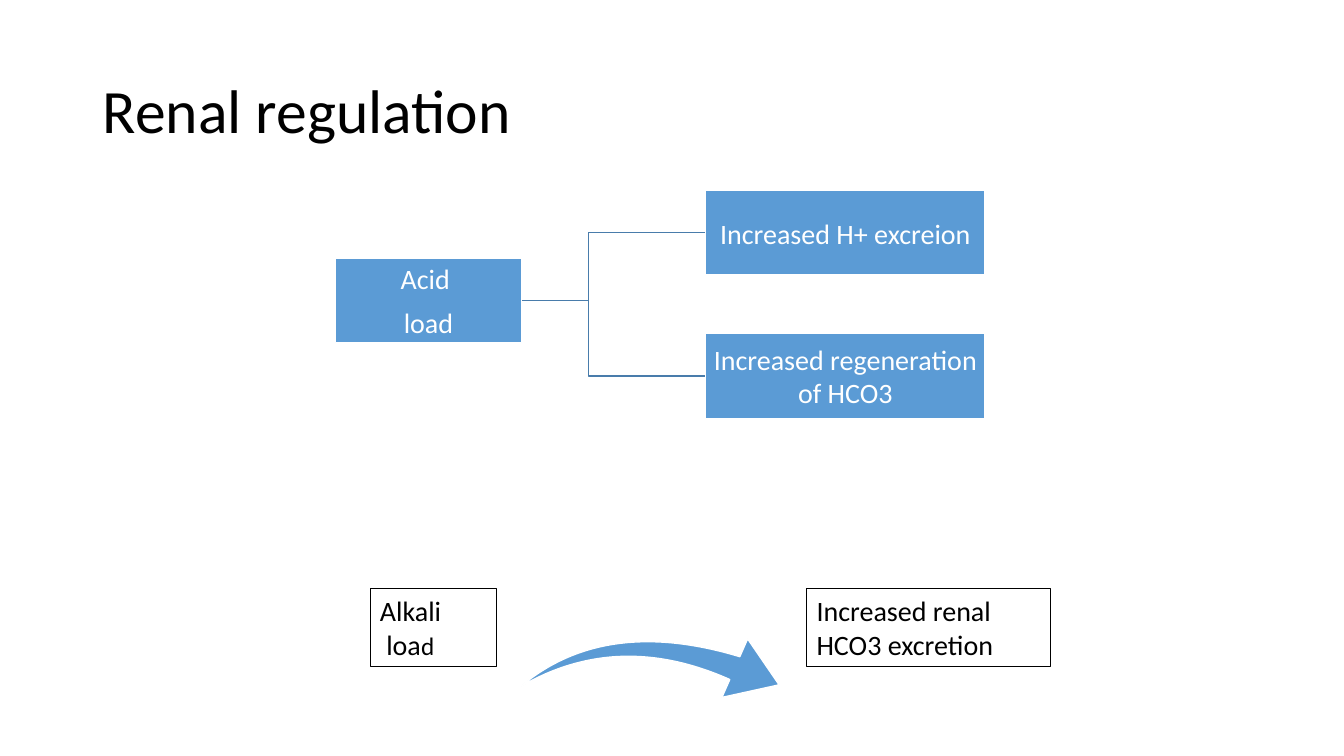
from dataclasses import dataclass
from pptx import Presentation
from pptx.dml.color import RGBColor
from pptx.enum.shapes import MSO_SHAPE
from pptx.enum.text import MSO_ANCHOR, MSO_AUTO_SIZE, PP_ALIGN
from pptx.util import Pt

PX = 9144


@dataclass(frozen=True)
class Theme:
    font: str = "Calibri"
    blue: str = "5B9BD5"
    link: str = "497CAB"
    white: str = "FFFFFF"
    black: str = "000000"
    title: int = 44
    body: int = 20
    small: int = 18
    gap: int = 7


THEME = Theme()


def rgb(code):
    return RGBColor.from_string(code)


def add_run(para, text, size, color):
    run = para.add_run()
    run.text = text
    run.font.name = THEME.font
    run.font.size = Pt(size)
    run.font.color.rgb = rgb(color)


def paint(shape, fill, line, width):
    shape.shadow.inherit = False
    if fill:
        shape.fill.solid()
        shape.fill.fore_color.rgb = rgb(fill)
    else:
        shape.fill.background()
    shape.line.color.rgb = rgb(line)
    shape.line.width = Pt(width)


def add_form(slide, kind, box, fill, line, width):
    shape = slide.shapes.add_shape(kind, *(n * PX for n in box))
    paint(shape, fill, line, width)
    return shape


def write(shape, paras, color, align, gap=0):
    frame = shape.text_frame
    frame.word_wrap = True
    for i, runs in enumerate(paras):
        para = frame.add_paragraph() if i else frame.paragraphs[0]
        para.alignment = align
        para.space_after = Pt(gap)
        for text, size in runs:
            add_run(para, text, size, color)


def add_title(slide, box, text):
    title = slide.shapes.title
    title.left, title.top, title.width, title.height = (n * PX for n in box)
    frame = title.text_frame
    frame.auto_size = MSO_AUTO_SIZE.NONE
    frame.vertical_anchor = MSO_ANCHOR.MIDDLE
    para = frame.paragraphs[0]
    para.alignment = PP_ALIGN.LEFT
    para.line_spacing = 0.9
    add_run(para, text, THEME.title, THEME.black)


def add_node(slide, box, lines):
    node = add_form(slide, MSO_SHAPE.RECTANGLE, box, THEME.blue, THEME.white, 1)
    frame = node.text_frame
    frame.margin_left = frame.margin_right = PX
    frame.margin_top = frame.margin_bottom = PX
    frame.vertical_anchor = MSO_ANCHOR.MIDDLE
    paras = [[(line, THEME.body)] for line in lines]
    write(node, paras, THEME.white, PP_ALIGN.CENTER, THEME.gap)


def add_branch(slide, start, end):
    (x, y), (right, level) = start, end
    mid = (x + right) // 2
    pen = slide.shapes.build_freeform(x, y, scale=PX)
    pen.add_line_segments([(mid, y), (mid, level), end], close=False)
    paint(pen.convert_to_shape(), None, THEME.link, 1)


def add_tree(slide, box, root, leaves):
    left, top, width, height = box
    tall, wide, leaf = 84, 184, 277
    edge = left + width - leaf
    step = (height - tall) // (len(leaves) - 1)
    mid = top + 109
    tops = [top + i * step for i in range(len(leaves))]
    for y in tops:
        add_branch(slide, (left + 135, mid), (edge, y + tall // 2))
    add_node(slide, (left, mid - tall // 2, wide, tall), root)
    for y, text in zip(tops, leaves):
        add_node(slide, (edge, y, leaf, tall), [text])


def add_card(slide, box, paras):
    card = add_form(slide, MSO_SHAPE.RECTANGLE, box,
                    THEME.white, THEME.black, 0.75)
    card.text_frame.vertical_anchor = MSO_ANCHOR.TOP
    write(card, paras, THEME.black, PP_ALIGN.LEFT)


def add_flow(slide, box, cause, effect):
    left, top, width, height = box
    wide = 242
    arrow = add_form(slide, MSO_SHAPE.SWOOSH_ARROW,
                     (left + 173, top + 9, 221, 154),
                     THEME.blue, THEME.white, 1)
    arrow.rotation = 30.1
    arrow.adjustments[0] = 0.16
    arrow.adjustments[1] = 0.31
    add_card(slide, (left, top, 125, height), cause)
    add_card(slide, (left + width - wide, top, wide, height), effect)


def main():
    deck = Presentation()
    deck.slide_width, deck.slide_height = 1333 * PX, 750 * PX
    slide = deck.slides.add_slide(deck.slide_layouts[5])
    add_title(slide, (92, 40, 1150, 145), "Renal regulation")
    add_tree(slide, (333, 189, 644, 226), ["Acid ", "load"],
             ["Increased H+ excreion", "Increased regeneration of HCO3"])
    add_flow(slide, (367, 584, 675, 77),
             [[("Alkali", THEME.body)],
              [(" loa", THEME.body), ("d", THEME.small)]],
             [[("Increased renal HCO3 excretion", THEME.body)]])
    deck.save("out.pptx")


if __name__ == "__main__":
    main()
